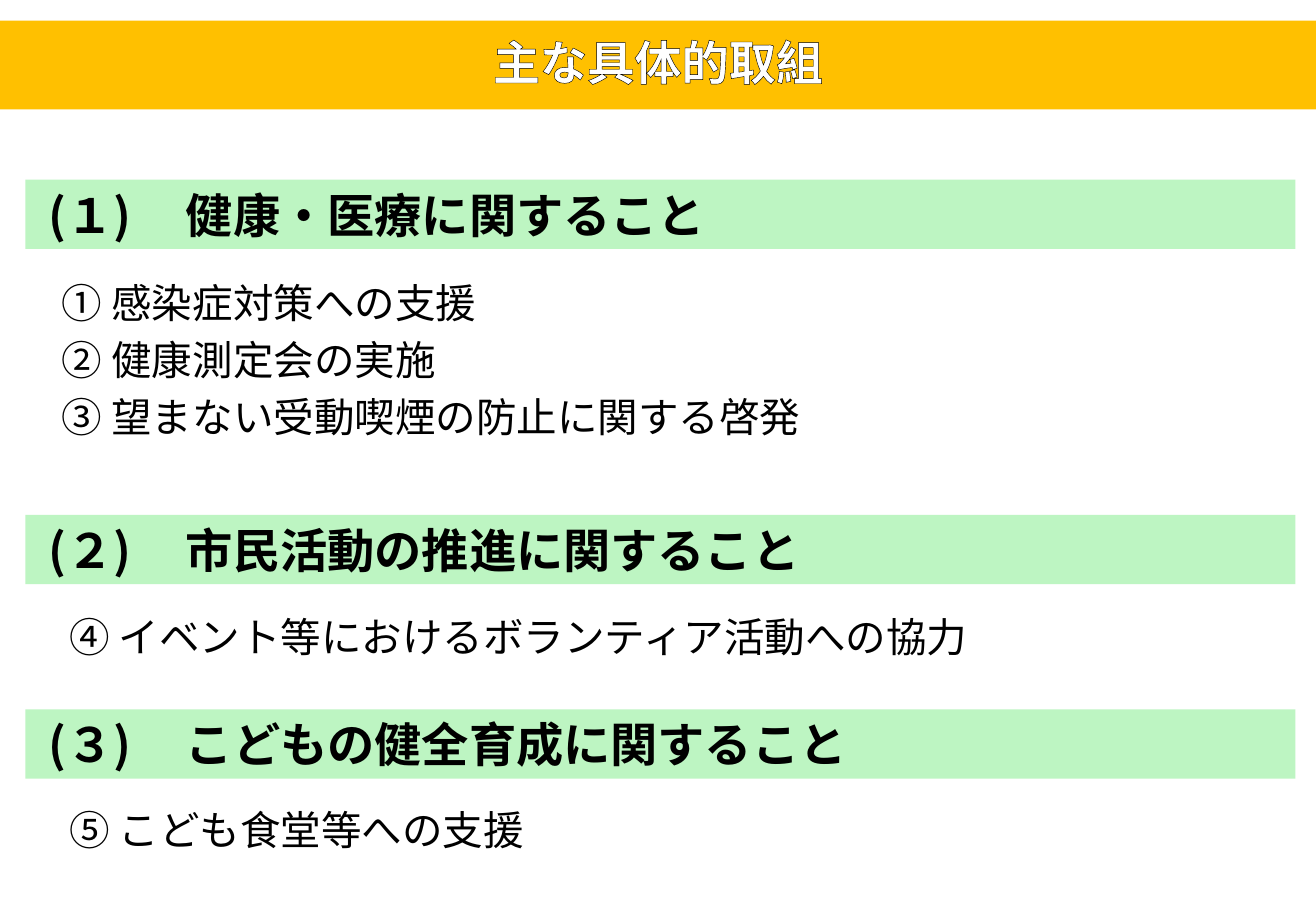
from lxml.etree import SubElement
from pptx import Presentation
from pptx.dml.color import RGBColor
from pptx.enum.shapes import MSO_SHAPE
from pptx.enum.text import MSO_ANCHOR, MSO_AUTO_SIZE, PP_ALIGN
from pptx.oxml.ns import qn
from pptx.util import Inches, Pt

FONT = "Noto Sans CJK JP"
BLACK, WHITE, AMBER, GREEN = "000000", "FFFFFF", "FFC000", "BDF5C2"

# heading top, number, heading, list top, list height, list indent, items
SECTIONS = [
    (1.48, "(１)", "健康・医療に関すること", 2.15, 1.62, 0.43,
     ["① 感染症対策への支援", "② 健康測定会の実施",
      "③ 望まない受動喫煙の防止に関する啓発"]),
    (4.24, "(２)", "市民活動の推進に関すること", 4.95, 0.57, 0.49,
     ["④ イベント等におけるボランティア活動への協力"]),
    (5.84, "(３)", "こどもの健全育成に関すること", 6.54, 0.57, 0.49,
     ["⑤ こども食堂等への支援"]),
]


def rgb(color):
    return RGBColor.from_string(color)


def place(sp, left, top, width, height):
    box = {"left": left, "top": top, "width": width, "height": height}
    for name, value in box.items():
        setattr(sp, name, Inches(value))


def paint(sp, color):
    sp.fill.solid()
    sp.fill.fore_color.rgb = rgb(color)
    sp.line.fill.background()


def write(sp, lines, size, color=BLACK, bold=False, inset=0.1, hang=0,
          **paragraph_format):
    """Fill a shape with one paragraph per line and return its runs."""
    tf = sp.text_frame
    frame_format = {
        "word_wrap": True, "auto_size": MSO_AUTO_SIZE.NONE,
        "vertical_anchor": MSO_ANCHOR.MIDDLE, "margin_left": Inches(inset),
        "margin_top": Inches(0.05), "margin_bottom": Inches(0.05),
    }
    for name, value in frame_format.items():
        setattr(tf, name, value)
    runs = []
    for i, line in enumerate(lines):
        p = tf.add_paragraph() if i else tf.paragraphs[0]
        formats = {"alignment": PP_ALIGN.LEFT, "space_before": Pt(5 if i else 0),
                   **paragraph_format}
        for name, value in formats.items():
            setattr(p, name, value)
        pPr = p._p.get_or_add_pPr()
        pPr.set("marL", str(Inches(hang)))
        pPr.set("indent", str(-Inches(hang)))
        SubElement(pPr, qn("a:buNone"))

        r = p.add_run()
        r.text = line
        for name, value in {"size": Pt(size), "bold": bold, "name": FONT}.items():
            setattr(r.font, name, value)
        r.font.color.rgb = rgb(color)
        SubElement(r._r.get_or_add_rPr(), qn("a:ea"), typeface=FONT)
        runs.append(r)
    return runs


def outline_text(r, color, width):
    rPr = r._r.get_or_add_rPr()
    ln = SubElement(rPr, qn("a:ln"), w=str(Pt(width)))
    fill = SubElement(ln, qn("a:solidFill"))
    SubElement(fill, qn("a:srgbClr"), val=color)
    rPr.insert(0, ln)


def add_title(s, text):
    sp = s.shapes.title
    place(sp, 0, 0.17, 10.83, 0.73)
    paint(sp, AMBER)
    r, = write(sp, [text], 28, WHITE, True,
               alignment=PP_ALIGN.CENTER, line_spacing=0.9)
    outline_text(r, BLACK, 0.75)


def add_heading(s, top, number, text):
    sp = s.shapes.add_shape(MSO_SHAPE.RECTANGLE, 0, 0, 0, 0)
    place(sp, 0.21, top, 10.45, 0.57)
    sp.shadow.inherit = False
    paint(sp, GREEN)
    write(sp, [f"{number}\t{text}"], 28, bold=True, inset=0.19, hang=1.13)


def add_list(sp, top, height, indent, items):
    place(sp, 0.08, top, 10.75, height)
    write(sp, items, 24, inset=indent)


def main():
    prs = Presentation()
    prs.slide_width, prs.slide_height = Inches(10.83), Inches(7.5)
    s = prs.slides.add_slide(prs.slide_layouts[1])

    # Title band
    add_title(s, "主な具体的取組")

    # Sections: the first list takes the body placeholder
    body = s.placeholders[1]
    for top, number, heading, list_top, height, indent, items in SECTIONS:
        add_heading(s, top, number, heading)
        sp = body or s.shapes.add_textbox(0, 0, 0, 0)
        add_list(sp, list_top, height, indent, items)
        body = None

    prs.save("out.pptx")


if __name__ == "__main__":
    main()
